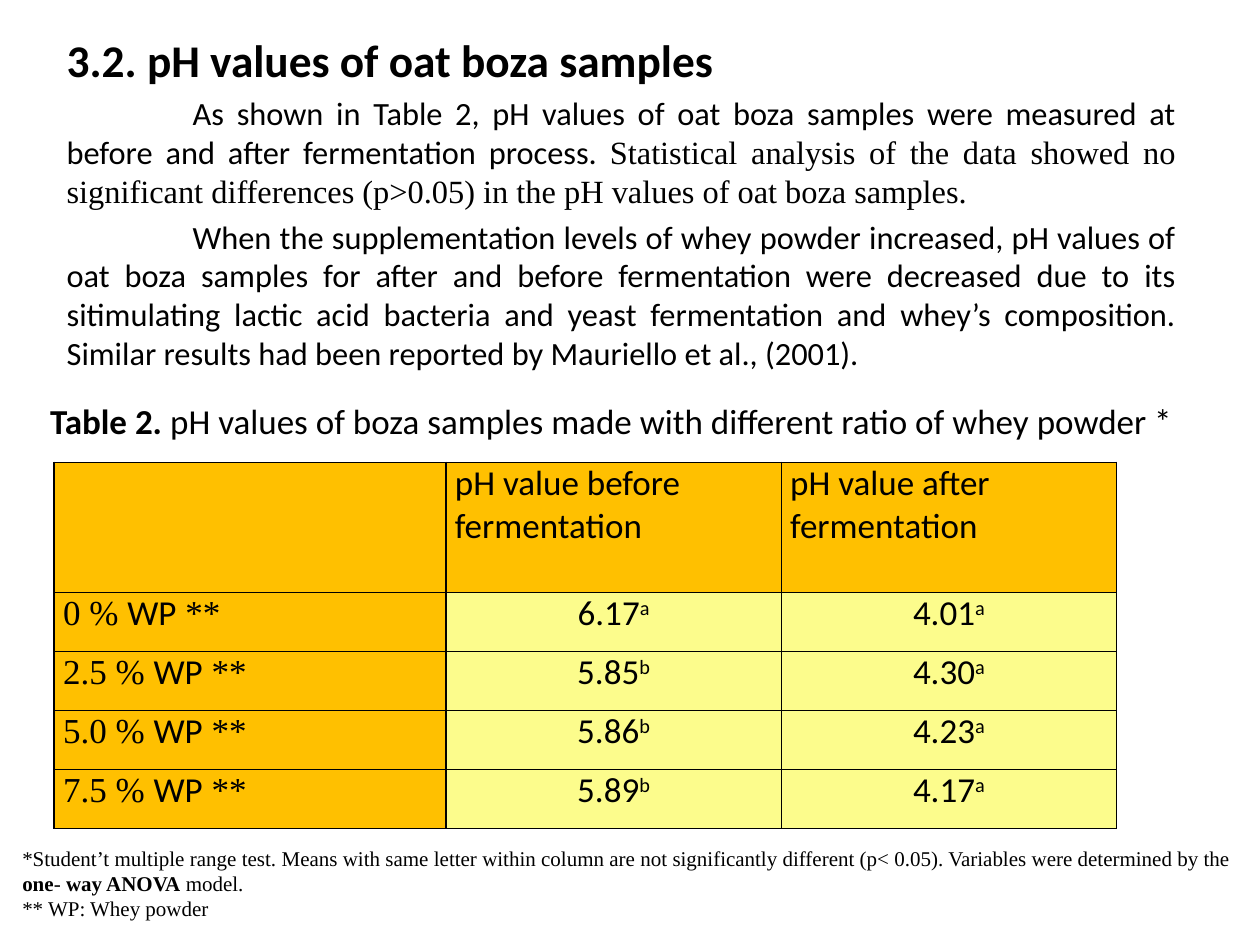
"""Build the slide on pH values of oat boza samples."""
from lxml.etree import SubElement
from pptx import Presentation
from pptx.dml.color import RGBColor
from pptx.enum.text import MSO_AUTO_SIZE as FIT, PP_ALIGN as AL
from pptx.oxml.ns import qn
from pptx.util import Cm, Pt

COLORS = {"text": "000000", "label": "FFC000", "value": "FCFC8C"}
SANS, SERIF = "Calibri", "Times New Roman"


def add_runs(p, size, align, *runs):
    p.alignment = align
    for text, font, *style in runs:
        r = p.add_run()
        r.text = text
        r.font.name, r.font.size = font, Pt(size)
        r.font.bold = "bold" in style
        r.font.color.rgb = RGBColor.from_string(COLORS["text"])
        if "super" in style:
            r.font._element.set("baseline", "30000")


def add_cell(cell, fill, align, *runs):
    cell.margin_left = cell.margin_right = Cm(0.18)
    cell.margin_top = cell.margin_bottom = 0
    add_runs(cell.text_frame.paragraphs[0], 20, align, *runs)
    tcPr = cell._tc.get_or_add_tcPr()
    for side in ("lnL", "lnR", "lnT", "lnB"):
        ln = SubElement(tcPr, qn(f"a:{side}"), w=str(Pt(1)))
        line = SubElement(ln, qn("a:solidFill"))
        SubElement(line, qn("a:srgbClr"), val=COLORS["text"])
    cell.fill.solid()
    cell.fill.fore_color.rgb = RGBColor.from_string(COLORS[fill])


prs = Presentation()
prs.slide_width, prs.slide_height = Cm(25.4), Cm(19.05)
s = prs.slides.add_slide(prs.slide_layouts[1])
title = s.shapes.title._element
title.getparent().remove(title)

body = s.placeholders[1]
body.left, body.top, body.width, body.height = Cm(1.09), Cm(0.53), Cm(22.86), Cm(7.01)
tf = body.text_frame
tf.auto_size = FIT.NONE
paragraphs = [
    (25.9, 0, [("3.2. pH values of oat boza samples", SANS, "bold")]),
    (18.5, 2.54, [
        ("As shown in Table 2, pH values of oat boza samples were measured at before "
         "and after fermentation process. ", SANS),
        ("Statistical analysis of the data showed no significant differences (p>0.05) "
         "in the pH values of oat boza samples.", SERIF)]),
    (18.5, 2.54, [
        ("When the supplementation levels of whey powder increased, pH values of oat "
         "boza samples for after and before fermentation were decreased due to its "
         "sitimulating lactic acid bacteria and yeast fermentation and whey’s "
         "composition. Similar results had been reported by Mauriello et al., (2001).",
         SANS)]),
]
for i, (size, indent, runs) in enumerate(paragraphs):
    p = tf.add_paragraph() if i else tf.paragraphs[0]
    pPr = p._p.get_or_add_pPr()
    pPr.set("marL", "0")
    pPr.set("indent", str(Cm(indent)))
    SubElement(pPr, qn("a:buNone"))
    p.space_before = Pt(0.2 * size if i else 0)
    add_runs(p, size, AL.JUSTIFY, *runs)

rows = [("0", "6.17", "a", "4.01", "a"), ("2.5", "5.85", "b", "4.30", "a"),
        ("5.0", "5.86", "b", "4.23", "a"), ("7.5", "5.89", "b", "4.17", "a")]
frame = s.shapes.add_table(5, 3, Cm(1.09), Cm(9.32), Cm(21.42), Cm(7.4))
table = frame.table
table.first_row = table.horz_banding = False
for column, width in zip(table.columns, (7.9, 6.76, 6.76)):
    column.width = Cm(width)
for row, height in zip(table.rows, [2.62] + [1.19] * 4):
    row.height = Cm(height)

add_cell(table.cell(0, 0), "label", AL.LEFT)
for j, when in enumerate(("before", "after"), 1):
    add_cell(table.cell(0, j), "label", AL.LEFT, (f"pH value {when} fermentation", SANS))
for i, (ratio, before, before_mark, after, after_mark) in enumerate(rows, 1):
    add_cell(table.cell(i, 0), "label", AL.LEFT,
             (f"{ratio} % ", SERIF), ("WP", SANS), (" **", SERIF))
    for j, (value, mark) in enumerate([(before, before_mark), (after, after_mark)], 1):
        add_cell(table.cell(i, j), "value", AL.CENTER,
                 (value, SANS), (mark, SANS, "super"))

notes = s.shapes.add_textbox(Cm(0.2), Cm(16.92), Cm(24.89), Cm(1.8))
tf = notes.text_frame
tf.word_wrap = True
add_runs(tf.paragraphs[0], 12, AL.JUSTIFY,
         ("*Student’t multiple range test. Means with same letter within column are not "
          "significantly different (p< 0.05). Variables were determined by the ", SERIF),
         ("one", SERIF, "bold"), ("- ", SERIF), ("way ANOVA", SERIF, "bold"),
         (" model.", SERIF))
add_runs(tf.add_paragraph(), 12, AL.LEFT, ("** WP: Whey powder", SERIF))

caption = s.shapes.add_textbox(Cm(0.76), Cm(7.92), Cm(23.8), Cm(1.12))
tf = caption.text_frame
tf.word_wrap = True
add_runs(tf.paragraphs[0], 20, AL.LEFT, ("Table 2. ", SANS, "bold"),
         ("pH values of boza samples made with different ratio of whey powder *", SANS))

prs.save("out.pptx")
